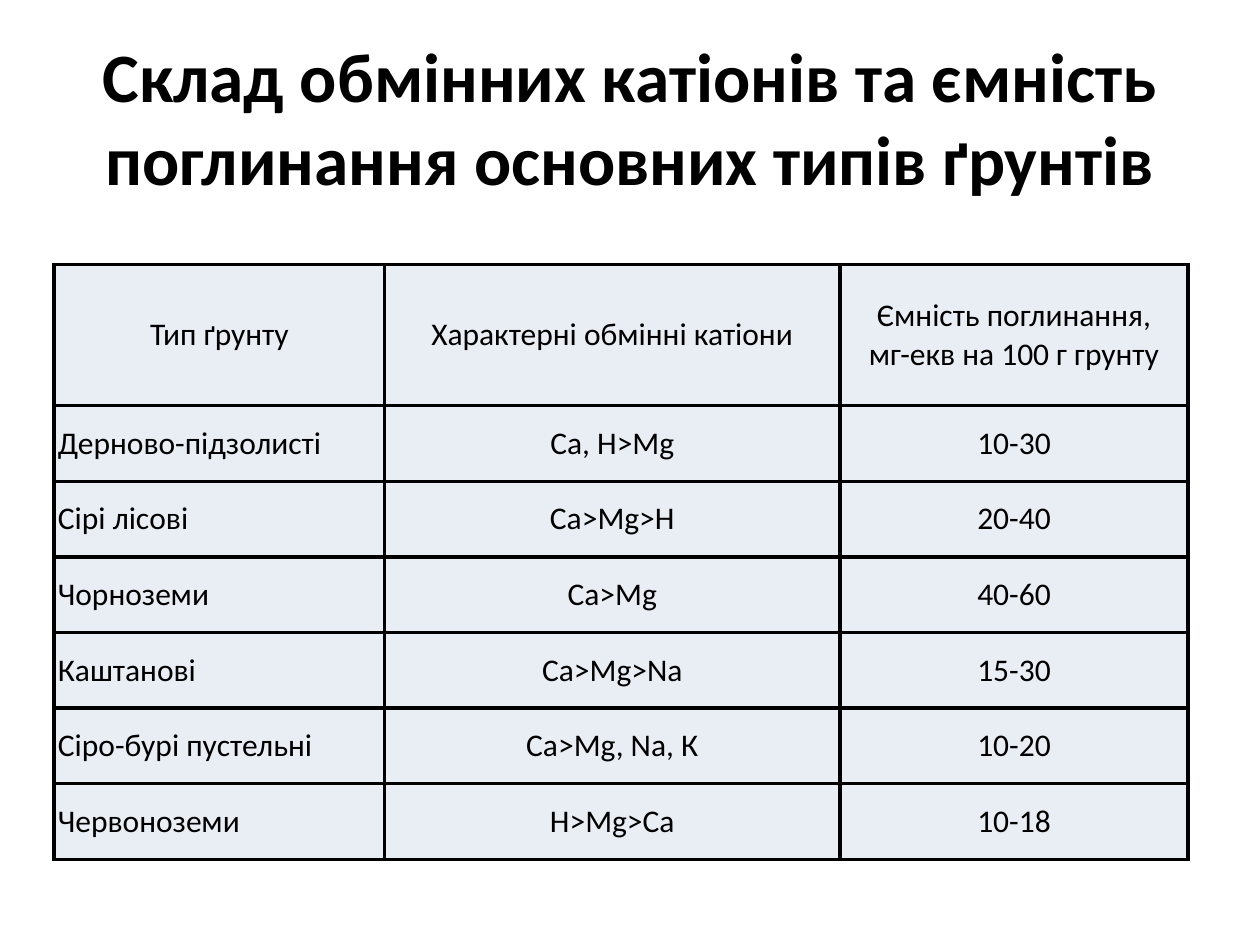
import dataclasses

import lxml.etree
import pptx
import pptx.dml.color
import pptx.enum.text
import pptx.oxml.ns
import pptx.util

Inches = pptx.util.Inches
Pt = pptx.util.Pt
RGBColor = pptx.dml.color.RGBColor
ALIGN = pptx.enum.text.PP_ALIGN
MIDDLE = pptx.enum.text.MSO_ANCHOR.MIDDLE


@dataclasses.dataclass(frozen=True)
class Theme:
    font: str = "Calibri"
    ink: str = "000000"
    cell_fill: str = "E9EDF4"
    title_size: float = 39.6
    cell_size: float = 18
    border_width: float = 2.25


THEME = Theme()

TITLE = "Склад обмінних катіонів та ємність поглинання основних типів ґрунтів"
SOILS = [
    ("Тип ґрунту", "Характерні обмінні катіони",
     "Ємність поглинання,\nмг-екв на 100 г грунту"),
    ("Дерново-підзолисті", "Са, H>Mg", "10-30"),
    ("Сірі лісові", "Ca>Mg>H", "20-40"),
    ("Чорноземи", "Ca>Mg", "40-60"),
    ("Каштанові", "Ca>Mg>Na", "15-30"),
    ("Сіро-бурі пустельні", "Ca>Mg, Na, К", "10-20"),
    ("Червоноземи", "H>Mg>Ca", "10-18"),
]
COLUMN_SHARES = (2.62, 3.61, 2.76)
HEADER_HEIGHT = 1.12


def write_text(frame, text, *, size, bold=False, align=ALIGN.CENTER):
    """Fill a text frame, one paragraph for each line of text."""
    frame.text = text
    for paragraph in frame.paragraphs:
        paragraph.alignment = align
        for run in paragraph.runs:
            run.font.name = THEME.font
            run.font.size = Pt(size)
            run.font.bold = bold
            run.font.color.rgb = RGBColor.from_string(THEME.ink)


def draw_borders(cell):
    properties = cell._tc.get_or_add_tcPr()
    qn = pptx.oxml.ns.qn
    for position, side in enumerate(("a:lnL", "a:lnR", "a:lnT", "a:lnB")):
        line = lxml.etree.Element(qn(side), w=str(Pt(THEME.border_width)))
        fill = lxml.etree.SubElement(line, qn("a:solidFill"))
        lxml.etree.SubElement(fill, qn("a:srgbClr"), val=THEME.ink)
        properties.insert(position, line)


def format_cell(cell, text, align):
    cell.margin_left = cell.margin_right = Inches(0.03)
    cell.margin_top = cell.margin_bottom = 0
    cell.vertical_anchor = MIDDLE
    cell.fill.solid()
    cell.fill.fore_color.rgb = RGBColor.from_string(THEME.cell_fill)
    write_text(cell.text_frame, text, size=THEME.cell_size, align=align)
    draw_borders(cell)


def add_title(slide, left, top, width, height):
    title = slide.shapes.title
    title.left, title.top = Inches(left), Inches(top)
    title.width, title.height = Inches(width), Inches(height)
    frame = title.text_frame
    frame.word_wrap = True
    frame.auto_size = pptx.enum.text.MSO_AUTO_SIZE.NONE
    frame.vertical_anchor = MIDDLE
    write_text(frame, TITLE, size=THEME.title_size, bold=True)


def add_soil_table(slide, left, top, width, height):
    table = slide.shapes.add_table(
        len(SOILS), len(COLUMN_SHARES),
        Inches(left), Inches(top), Inches(width), Inches(height)).table
    table.first_row = table.horz_banding = False
    for column, share in zip(table.columns, COLUMN_SHARES):
        column.width = Inches(width * share / sum(COLUMN_SHARES))
    soil_height = (height - HEADER_HEIGHT) / (len(SOILS) - 1)
    for r, soil in enumerate(SOILS):
        table.rows[r].height = Inches(soil_height if r else HEADER_HEIGHT)
        for c, text in enumerate(soil):
            is_soil_name = r > 0 and c == 0
            format_cell(table.cell(r, c), text,
                        ALIGN.LEFT if is_soil_name else ALIGN.CENTER)


def main():
    deck = pptx.Presentation()
    deck.slide_width, deck.slide_height = Inches(10), Inches(7.5)
    slide = deck.slides.add_slide(deck.slide_layouts.get_by_name("Title Only"))
    add_title(slide, 0.5, 0.3, 9, 1.25)
    add_soil_table(slide, 0.43, 2.1, 9, 4.72)
    deck.save("out.pptx")


if __name__ == "__main__":
    main()
